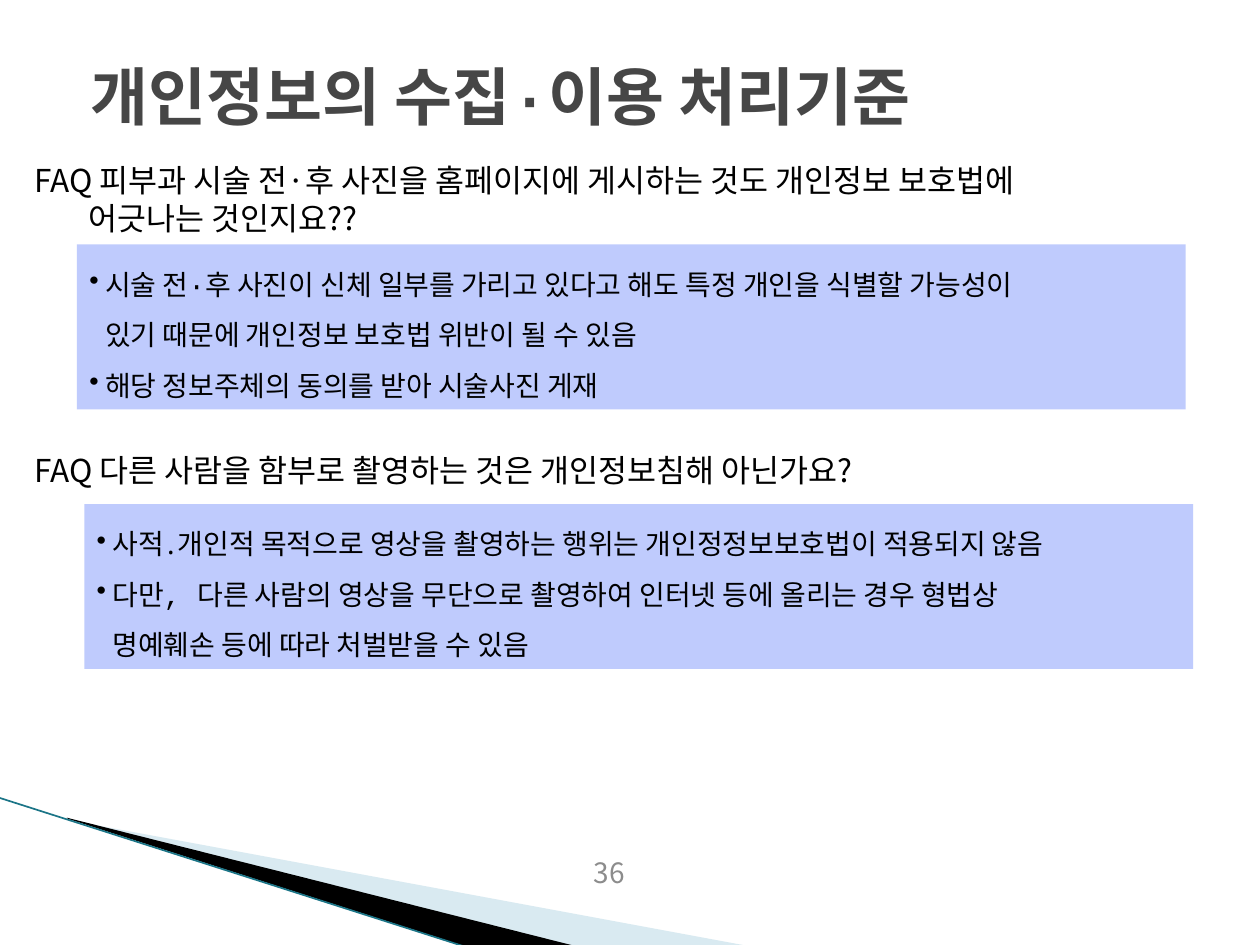
from lxml import etree
from pptx import Presentation
from pptx.dml.color import RGBColor
from pptx.enum.shapes import MSO_CONNECTOR, MSO_SHAPE
from pptx.enum.text import MSO_ANCHOR, MSO_AUTO_SIZE, PP_ALIGN
from pptx.oxml.ns import qn
from pptx.util import Pt

LEFT, CENTER = PP_ALIGN.LEFT, PP_ALIGN.CENTER
TOP, MIDDLE = MSO_ANCHOR.TOP, MSO_ANCHOR.MIDDLE
NO_FIT, GROW = MSO_AUTO_SIZE.NONE, MSO_AUTO_SIZE.SHAPE_TO_FIT_TEXT
RECTANGLE, STRAIGHT = MSO_SHAPE.RECTANGLE, MSO_CONNECTOR.STRAIGHT

SANS, MONO = "Noto Sans CJK KR", "Courier New"
BLACK, GRAY, TITLE_GRAY, PANEL = "000000", "8C8C8C", "464646", "BFCBFD"

# Content
TITLE = "개인정보의 수집·이용 처리기준"
PAGE_NUMBER = "36"
# Question: top, height, lines; answer: left, top, lines as (has bullet, text)
FAQS = [
    {
        "question": (88.6, 51, [
            "FAQ 피부과 시술 전·후 사진을 홈페이지에 게시하는 것도 개인정보 보호법에",
            "어긋나는 것인지요??",
        ]),
        "answer": (44, 139.7, [
            (True, "시술 전·후 사진이 신체 일부를 가리고 있다고 해도 특정 개인을 식별할 가능성이"),
            (False, "있기 때문에 개인정보 보호법 위반이 될 수 있음"),
            (True, "해당 정보주체의 동의를 받아 시술사진 게재"),
        ]),
    },
    {
        "question": (254.2, 29, ["FAQ 다른 사람을 함부로 촬영하는 것은 개인정보침해 아닌가요?"]),
        "answer": (48.2, 288, [
            (True, "사적․개인적 목적으로 영상을 촬영하는 행위는 개인정정보보호법이 적용되지 않음"),
            (True, "다만, 다른 사람의 영상을 무단으로 촬영하여 인터넷 등에 올리는 경우 형법상"),
            (False, "명예훼손 등에 따라 처벌받을 수 있음"),
        ]),
    },
]
# Corner wedges: points, colour, opacity in percent
WEDGES = [
    ([(39.6, 468.7), (428.4, 540.7), (328.3, 540.7), (39.6, 468)], "A0CBDC", 40),
    ([(38.2, 467.3), (329, 540.7), (267.8, 541.4), (38.9, 468)], BLACK, 100),
]
EDGE = (-0.7, 455.8, 267.1, 541.4)


def color(hex_string):
    return RGBColor.from_string(hex_string)


def points(*values):
    return [Pt(value) for value in values]


def write(paragraph, text, size, font_name, text_color, bold=False):
    run = paragraph.add_run()
    run.text = text
    font = run.font
    font.size, font.name, font.bold = Pt(size), font_name, bold
    font.color.rgb = color(text_color)
    east_asian = etree.Element(qn("a:ea"), typeface=SANS)
    run._r.rPr.find(qn("a:latin")).addnext(east_asian)


def indent(paragraph, margin, first_line=0, bullet=False):
    properties = paragraph._p.get_or_add_pPr()
    properties.set("marL", str(Pt(margin)))
    properties.set("indent", str(Pt(first_line)))
    if bullet:
        etree.SubElement(properties, qn("a:buChar"), char="•")


def setup(frame, anchor=TOP, fit=GROW):
    frame.word_wrap = True
    frame.auto_size = fit
    frame.vertical_anchor = anchor


def paragraphs(frame, count):
    return [frame.paragraphs[0]] + [frame.add_paragraph() for _ in range(count - 1)]


def add_wedge(slide, outline, fill_color, opacity):
    start, *rest = [points(*point) for point in outline]
    builder = slide.shapes.build_freeform(*start)
    builder.add_line_segments(rest, close=True)
    shape = builder.convert_to_shape()
    shape.shadow.inherit = False
    shape.line.fill.background()
    shape.fill.solid()
    shape.fill.fore_color.rgb = color(fill_color)
    if opacity < 100:
        solid = shape._element.spPr.find(qn("a:solidFill"))
        etree.SubElement(solid[0], qn("a:alpha"), val=str(opacity * 1000))


def add_question(slide, top, height, lines):
    box = slide.shapes.add_textbox(*points(8.6, top, 652.3, height))
    setup(box.text_frame)
    for number, paragraph in enumerate(paragraphs(box.text_frame, len(lines))):
        indent(paragraph, 35 if number else 4)
        write(paragraph, lines[number], 18, SANS, BLACK)


def add_answer(slide, left, top, lines):
    panel = slide.shapes.add_shape(RECTANGLE, *points(left, top, 633.6, 94.3))
    panel.shadow.inherit = False
    panel.fill.solid()
    panel.fill.fore_color.rgb = color(PANEL)
    panel.line.fill.background()
    setup(panel.text_frame)
    for paragraph, (bullet, text) in zip(paragraphs(panel.text_frame, len(lines)), lines):
        indent(paragraph, 9, -9 if bullet else 0, bullet)
        paragraph.alignment = LEFT
        paragraph.line_spacing = 1.5
        write(paragraph, text, 16, MONO, BLACK)


presentation = Presentation()
presentation.slide_width, presentation.slide_height = points(720, 540)
slide = presentation.slides.add_slide(presentation.slide_layouts[5])

# Corner decoration
for wedge in WEDGES:
    add_wedge(slide, *wedge)
edge = slide.shapes.add_connector(STRAIGHT, *points(*EDGE))
edge.line.color.rgb = color("1B7587")
edge.line.width = Pt(0.95)
etree.SubElement(edge._element.spPr, qn("a:effectLst"))

# Title
title = slide.shapes.title
title.left, title.top, title.width, title.height = points(36.7, 31.7, 648, 45.4)
setup(title.text_frame, MIDDLE, NO_FIT)
title_paragraph = title.text_frame.paragraphs[0]
title_paragraph.alignment = LEFT
indent(title_paragraph, 8)
write(title_paragraph, TITLE, 36, MONO, TITLE_GRAY, bold=True)

# Page number
page_box = slide.shapes.add_textbox(*points(264.2, 485.3, 167.8, 28.8))
setup(page_box.text_frame, fit=NO_FIT)
page_paragraph = page_box.text_frame.paragraphs[0]
page_paragraph.alignment = CENTER
write(page_paragraph, PAGE_NUMBER, 16, SANS, GRAY)

# Questions and answers
for faq in FAQS:
    add_question(slide, *faq["question"])
    add_answer(slide, *faq["answer"])

presentation.save("out.pptx")
